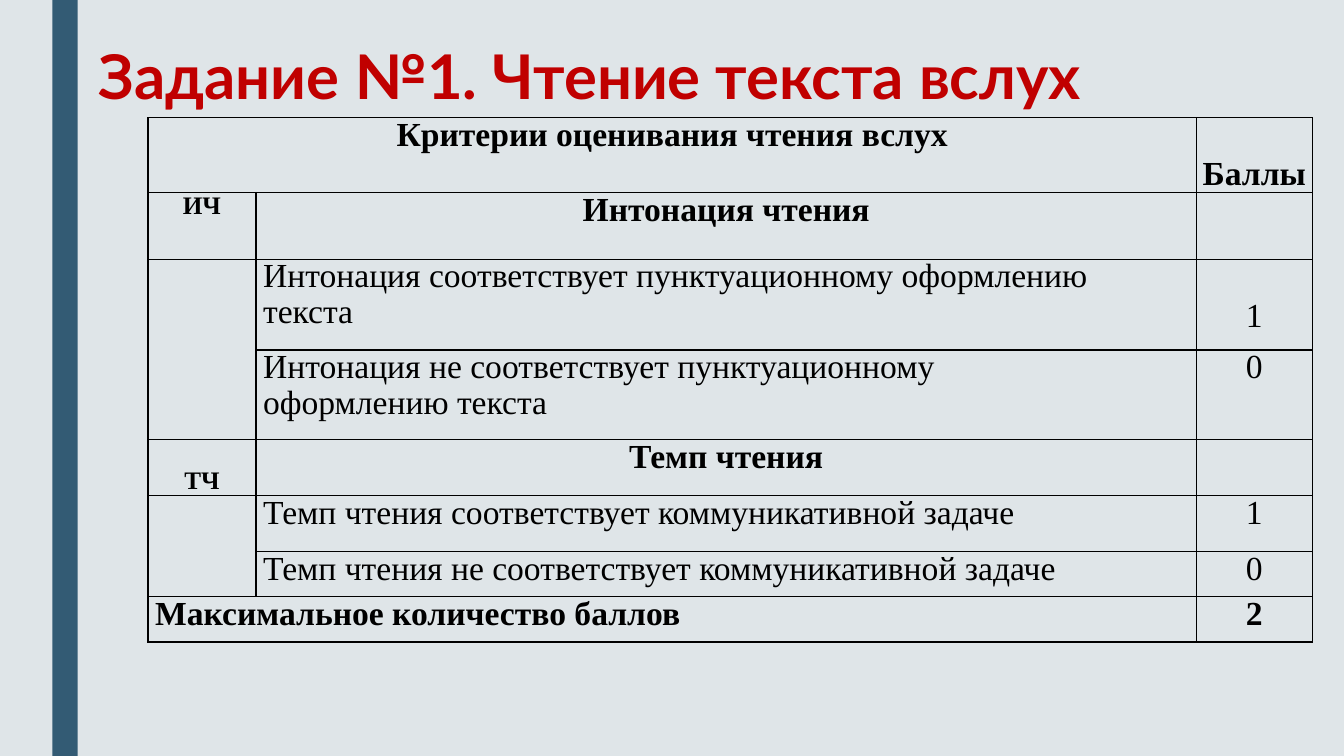
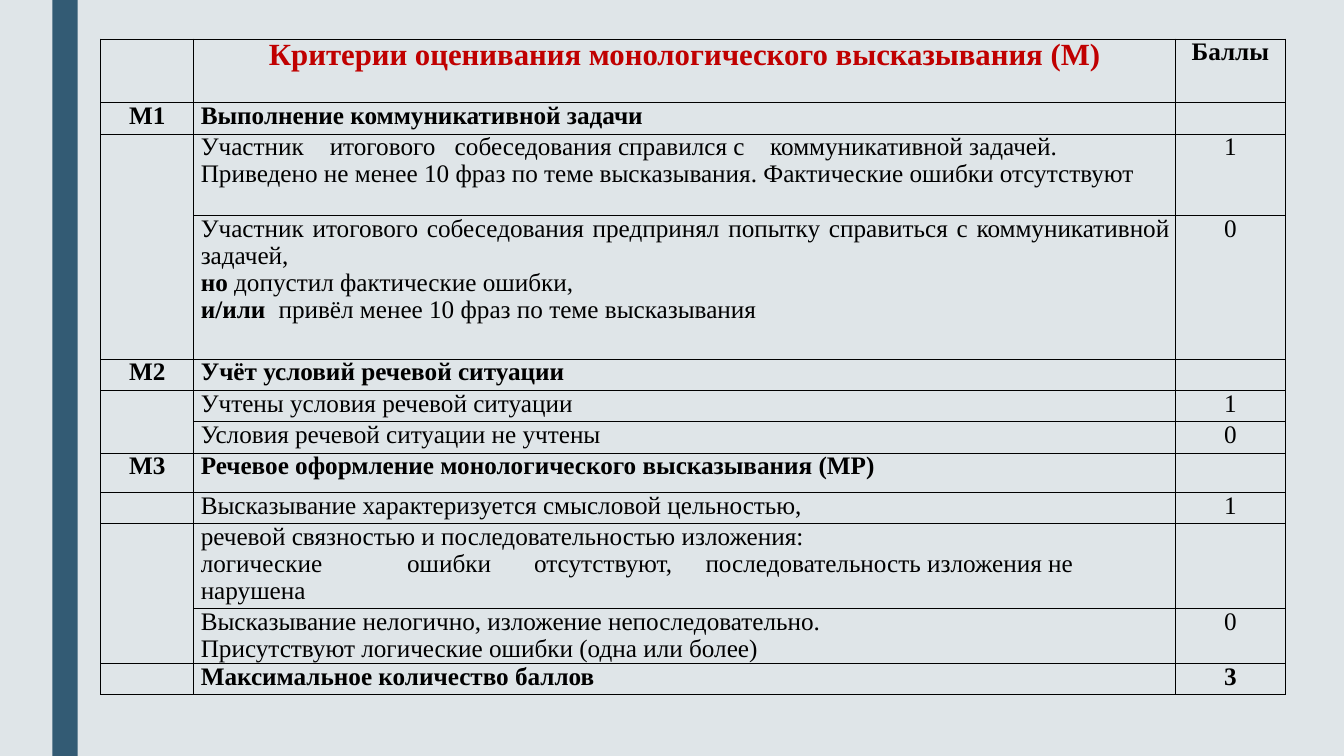
import dataclasses
import typing

import lxml.etree
import pptx
import pptx.dml.color
import pptx.enum.shapes
import pptx.enum.text
import pptx.oxml.ns
import pptx.util

Cm = pptx.util.Cm
Pt = pptx.util.Pt
Align = pptx.enum.text.PP_ALIGN
Anchor = pptx.enum.text.MSO_ANCHOR
qn = pptx.oxml.ns.qn


@dataclasses.dataclass(frozen=True)
class Theme:
    background: str = "DFE5E8"
    band: str = "335B74"
    accent: str = "C00000"
    ink: str = "000000"
    title_font: str = "Lato"
    table_font: str = "Times New Roman"
    title_size: int = 44
    large: int = 24
    heading: int = 22
    small: int = 18
    leading: float = 0.97
    empty_leading: int = 12
    border: int = 1


THEME = Theme()


@dataclasses.dataclass(frozen=True)
class Entry:
    lines: tuple
    bold: bool = False
    align: typing.Any = Align.LEFT
    size: typing.Optional[int] = None
    color: str = THEME.ink
    tabs: tuple = ()
    lift: typing.Optional[float] = None


def plain(*lines, **options):
    return Entry(lines, **options)


def strong(*lines, **options):
    return Entry(lines, bold=True, **options)


def score(text, **options):
    return Entry((text,), align=Align.CENTER, **options)


def label(text, **options):
    return score(text, bold=True, **options)


class Deck:
    def __init__(self, theme):
        self.theme = theme
        self.deck = pptx.Presentation()
        self.deck.slide_width = Cm(33.87)
        self.deck.slide_height = Cm(19.05)
        self.page = None
        fill = self.deck.slide_master.background.fill
        fill.solid()
        fill.fore_color.rgb = self.color(theme.background)

    def color(self, value):
        return pptx.dml.color.RGBColor.from_string(value)

    def add_page(self, layout):
        first = self.page is None
        self.page = self.deck.slides.add_slide(self.deck.slide_layouts[layout])
        if first:
            self.add_master_band()

    def add_master_band(self):
        band = self.page.shapes.add_shape(
            pptx.enum.shapes.MSO_SHAPE.RECTANGLE,
            Cm(1.32), 0, Cm(0.64), self.deck.slide_height)
        band.shadow.inherit = False
        band.fill.solid()
        band.fill.fore_color.rgb = self.color(self.theme.band)
        band.line.fill.background()
        self.deck.slide_master.shapes.element.insert(2, band.element)

    def add_span(self, para, text, font, size, color, bold):
        span = para.add_run()
        span.text = text
        span.font.name = font
        span.font.size = Pt(size)
        span.font.bold = bold
        span.font.color.rgb = self.color(color)

    def add_title(self, text):
        box = self.page.shapes.title
        box.left, box.top, box.width, box.height = Cm(2.24), Cm(0.86), Cm(26.67), Cm(2.29)
        frame = box.text_frame
        frame.auto_size = pptx.enum.text.MSO_AUTO_SIZE.NONE
        frame.vertical_anchor = Anchor.MIDDLE
        para = frame.paragraphs[0]
        para.alignment = Align.LEFT
        para.line_spacing = 0.89
        self.add_span(para, text, self.theme.title_font, self.theme.title_size,
                      self.theme.accent, True)

    def add_table(self, left, top, columns, heights, rows, size, merges):
        frame = self.page.shapes.add_table(
            len(rows), len(columns), Cm(left), Cm(top), Cm(sum(columns)), Cm(sum(heights)))
        table = frame.table
        table.first_row = False
        table.horz_banding = False
        for column, width in zip(table.columns, columns):
            column.width = Cm(width)
        for row, height in zip(table.rows, heights):
            row.height = Cm(height)
        for row, entries in zip(table.rows, rows):
            for cell, entry in zip(row.cells, entries):
                self.style_cell(cell)
                self.fill_cell(cell, entry, size)
        for start, end in merges:
            table.cell(*start).merge(table.cell(*end))

    def style_cell(self, cell):
        cell.margin_left = cell.margin_right = cell.margin_top = cell.margin_bottom = 0
        cell.fill.background()
        properties = cell._tc.get_or_add_tcPr()
        for position, side in enumerate(("lnL", "lnR", "lnT", "lnB")):
            line = lxml.etree.Element(qn("a:" + side), w=str(Pt(self.theme.border)))
            solid = lxml.etree.SubElement(line, qn("a:solidFill"))
            lxml.etree.SubElement(solid, qn("a:srgbClr"), val=self.theme.ink)
            properties.insert(position, line)

    def fill_cell(self, cell, entry, size):
        frame = cell.text_frame
        if entry is None:
            frame.paragraphs[0].line_spacing = Pt(self.theme.empty_leading)
            return
        if entry.align != Align.CENTER:
            cell.margin_left, cell.margin_right = Cm(0.18), Cm(0.13)
        if entry.lift is not None:
            cell.vertical_anchor = Anchor.BOTTOM
            cell.margin_bottom = Cm(entry.lift)
        for index, line in enumerate(entry.lines):
            para = frame.add_paragraph() if index else frame.paragraphs[0]
            para.alignment = entry.align
            para.line_spacing = self.theme.leading
            if entry.tabs:
                self.add_tabs(para, entry.tabs)
            spans = [(line, entry.bold)] if isinstance(line, str) else line
            for text, bold in spans:
                self.add_span(para, text, self.theme.table_font,
                              entry.size or size, entry.color, bold)

    def add_tabs(self, para, stops):
        tabs = lxml.etree.SubElement(para._p.get_or_add_pPr(), qn("a:tabLst"))
        for stop in stops:
            lxml.etree.SubElement(tabs, qn("a:tab"), pos=str(Cm(stop)), algn="l")

    def save(self):
        self.deck.save("out.pptx")


def build_reading(deck):
    deck.add_page(5)
    deck.add_title("Задание №1. Чтение текста вслух")
    rows = [
        (label("Критерии оценивания чтения вслух"), None, label("Баллы", lift=0)),
        (label("ИЧ", size=THEME.small), label("Интонация чтения"), None),
        (None, plain("Интонация соответствует пунктуационному оформлению", "текста"),
         score("1", lift=0.38)),
        (None, plain("Интонация не соответствует пунктуационному", "оформлению текста"),
         score("0")),
        (label("ТЧ", size=THEME.small, lift=0), label("Темп чтения"), None),
        (None, plain("Темп чтения соответствует коммуникативной задаче"), score("1")),
        (None, plain("Темп чтения не соответствует коммуникативной задаче"), score("0")),
        (strong("Максимальное количество баллов"), None, label("2")),
    ]
    deck.add_table(
        3.73, 2.97, (2.72, 23.7, 2.92),
        (1.88, 1.68, 2.29, 2.26, 1.4, 1.42, 1.14, 1.14), rows, THEME.large,
        [((0, 0), (0, 1)), ((2, 0), (3, 0)), ((5, 0), (6, 0)), ((7, 0), (7, 1))])


def build_monologue(deck):
    deck.add_page(6)
    left, columns = 2.54, (2.34, 24.74, 2.77)
    criteria = [
        (None, label("Критерии оценивания монологического высказывания (М)",
                     size=THEME.heading, color=THEME.accent), label("Баллы")),
        (label("М1"), strong("Выполнение коммуникативной задачи"), None),
        (None, plain(
            "Участник\tитогового\tсобеседования справился с\tкоммуникативной задачей.",
            "Приведено не менее 10 фраз по теме высказывания. Фактические ошибки отсутствуют",
            tabs=(3.25, 6.4, 14.35)), score("1")),
        (None, plain(
            "Участник итогового собеседования предпринял попытку справиться"
            " с коммуникативной задачей,",
            [("но ", True), ("допустил фактические ошибки,", False)],
            [("и/или\t", True), ("привёл менее 10 фраз по теме высказывания", False)],
            align=Align.JUSTIFY, tabs=(1.96,)), score("0")),
        (label("М2"), strong("Учёт условий речевой ситуации"), None),
        (None, plain("Учтены условия речевой ситуации"), score("1")),
        (None, plain("Условия речевой ситуации не учтены"), score("0")),
        (label("М3"), strong("Речевое оформление монологического высказывания (МР)"), None),
        (None, plain("Высказывание характеризуется смысловой цельностью,"), score("1")),
    ]
    deck.add_table(
        left, 0.99, columns, (1.6, 0.79, 2.06, 3.61, 0.79, 0.79, 0.79, 0.99, 0.79),
        criteria, THEME.small, [((2, 0), (3, 0)), ((5, 0), (6, 0))])
    continuation = [
        (None, plain(
            "речевой связностью и последовательностью изложения:",
            "логические\tошибки\tотсутствуют,\tпоследовательность изложения не нарушена",
            tabs=(5.2, 8.4, 12.72)), None),
        (None, plain("Высказывание нелогично, изложение непоследовательно.",
                     "Присутствуют логические ошибки (одна или более)"), score("0")),
        (None, strong("Максимальное количество баллов"), label("3")),
    ]
    deck.add_table(left, 13.2, columns, (2.13, 1.4, 0.71), continuation,
                   THEME.small, [((0, 0), (1, 0))])


def main():
    deck = Deck(THEME)
    build_reading(deck)
    build_monologue(deck)
    deck.save()


if __name__ == "__main__":
    main()
